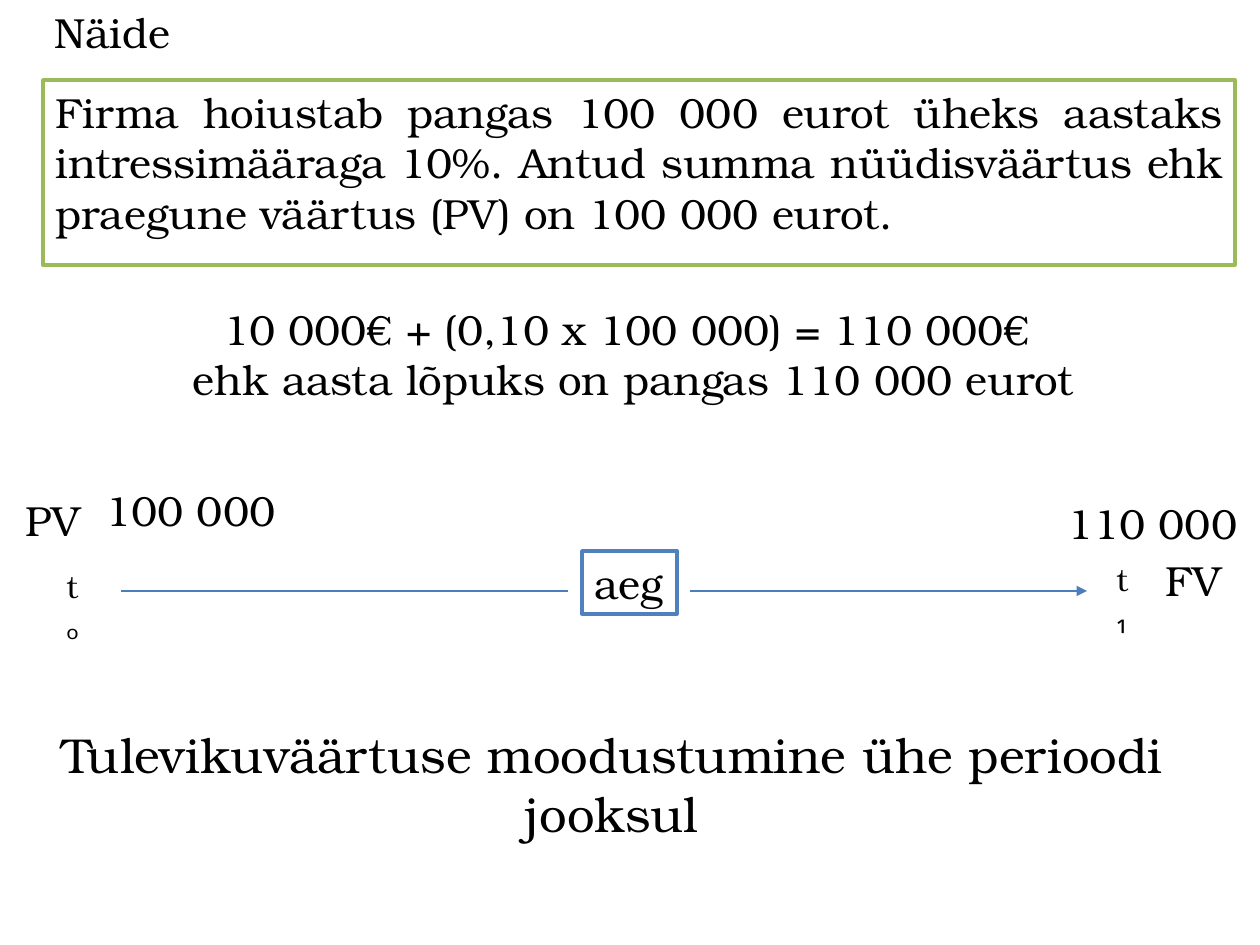
from lxml.etree import SubElement
from pptx import Presentation
from pptx.dml.color import RGBColor
from pptx.enum.shapes import MSO_CONNECTOR as CONN, MSO_SHAPE as SHAPE
from pptx.enum.text import MSO_ANCHOR as ANCHOR, MSO_AUTO_SIZE as AUTO, PP_ALIGN as ALIGN
from pptx.oxml.ns import qn
from pptx.util import Emu, Pt

PX = 914400 / 126
FONT = "TeX Gyre Bonum"
COLORS = {
    "text": "000000",
    "paper": "FFFFFF",
    "green": "9BBB59",
    "blue": "4F81BD",
    "axis": "4B7EBC",
}


def px(*lengths):
    return [Emu(round(n * PX)) for n in lengths]


def color(name):
    return RGBColor.from_string(COLORS[name])


def write(tf, lines, size=24, wrap=True, anchor=ANCHOR.TOP, grow=True):
    """Fill a text frame with (text, alignment) lines."""
    tf.word_wrap = wrap
    tf.auto_size = AUTO.SHAPE_TO_FIT_TEXT if grow else AUTO.NONE
    tf.vertical_anchor = anchor
    for i, (text, align) in enumerate(lines):
        p = tf.add_paragraph() if i else tf.paragraphs[0]
        p.alignment = align
        r = p.add_run()
        r.text = text
        r.font.name = FONT
        r.font.size = Pt(size)
        r.font.color.rgb = color("text")


def add_title(slide, box, text):
    sp = slide.shapes.title
    sp.left, sp.top, sp.width, sp.height = px(*box)
    write(sp.text_frame, [(text, ALIGN.LEFT)], anchor=ANCHOR.MIDDLE, grow=False)


def add_text(slide, box, lines, size=24, wrap=False):
    sp = slide.shapes.add_textbox(*px(*box))
    write(sp.text_frame, lines, size, wrap)


def add_frame(slide, box, text, line, align=ALIGN.LEFT, wrap=False):
    """Add a white rectangle with a coloured border around its text."""
    sp = slide.shapes.add_shape(SHAPE.RECTANGLE, *px(*box))
    sp.shadow.inherit = False
    sp.fill.solid()
    sp.fill.fore_color.rgb = color("paper")
    sp.line.color.rgb = color(line)
    sp.line.width = Pt(2)
    write(sp.text_frame, [(text, align)], wrap=wrap, grow=not wrap)
    return sp


def add_axis(slide, x1, x2, y, arrow=False):
    line = slide.shapes.add_connector(CONN.STRAIGHT, *px(x1, y, x2, y))
    line.line.color.rgb = color("axis")
    line.line.width = Pt(0.75)
    if arrow:
        SubElement(line.line._get_or_add_ln(), qn("a:tailEnd"), type="triangle")
    SubElement(line._element.spPr, qn("a:effectLst"))


def main():
    prs = Presentation()
    prs.slide_width, prs.slide_height = px(1260, 945)
    slide = prs.slides.add_slide(prs.slide_layouts[5])

    add_title(slide, (42, 1, 159, 62), "Näide")
    task = add_frame(
        slide, (43, 80, 1192, 185),
        "Firma hoiustab pangas 100 000 eurot üheks aastaks intressimääraga 10%. "
        "Antud summa nüüdisväärtus ehk praegune väärtus (PV) on 100 000 eurot. ",
        "green", ALIGN.JUSTIFY, wrap=True)
    task.text_frame.paragraphs[0].space_before = Pt(4.8)
    add_text(slide, (25, 297, 1216, 115), [
        ("10 000€ + (0,10 x 100 000) = 110 000€ ", ALIGN.CENTER),
        ("ehk aasta lõpuks on pangas 110 000 eurot", ALIGN.CENTER),
    ], wrap=True)

    add_axis(slide, 121, 568, 591)
    add_axis(slide, 690, 1087, 591, arrow=True)
    add_frame(slide, (582, 551, 95, 63), "aeg", "blue")

    labels = [
        ((93, 478, 197, 63), "100 000", 24),
        ((1055, 491, 197, 63), "110 000", 24),
        ((13, 488, 82, 63), "PV", 24),
        ((54, 561, 48, 50), "tₒ", 18),
        ((1104, 554, 47, 50), "t₁", 18),
        ((1153, 548, 82, 63), "FV", 24),
    ]
    for box, text, size in labels:
        add_text(slide, box, [(text, ALIGN.LEFT)], size)

    add_text(slide, (49, 718, 1157, 131), [
        ("Tulevikuväärtuse moodustumine ühe perioodi", ALIGN.LEFT),
        ("jooksul", ALIGN.CENTER),
    ], size=28)
    prs.save("out.pptx")


if __name__ == "__main__":
    main()
